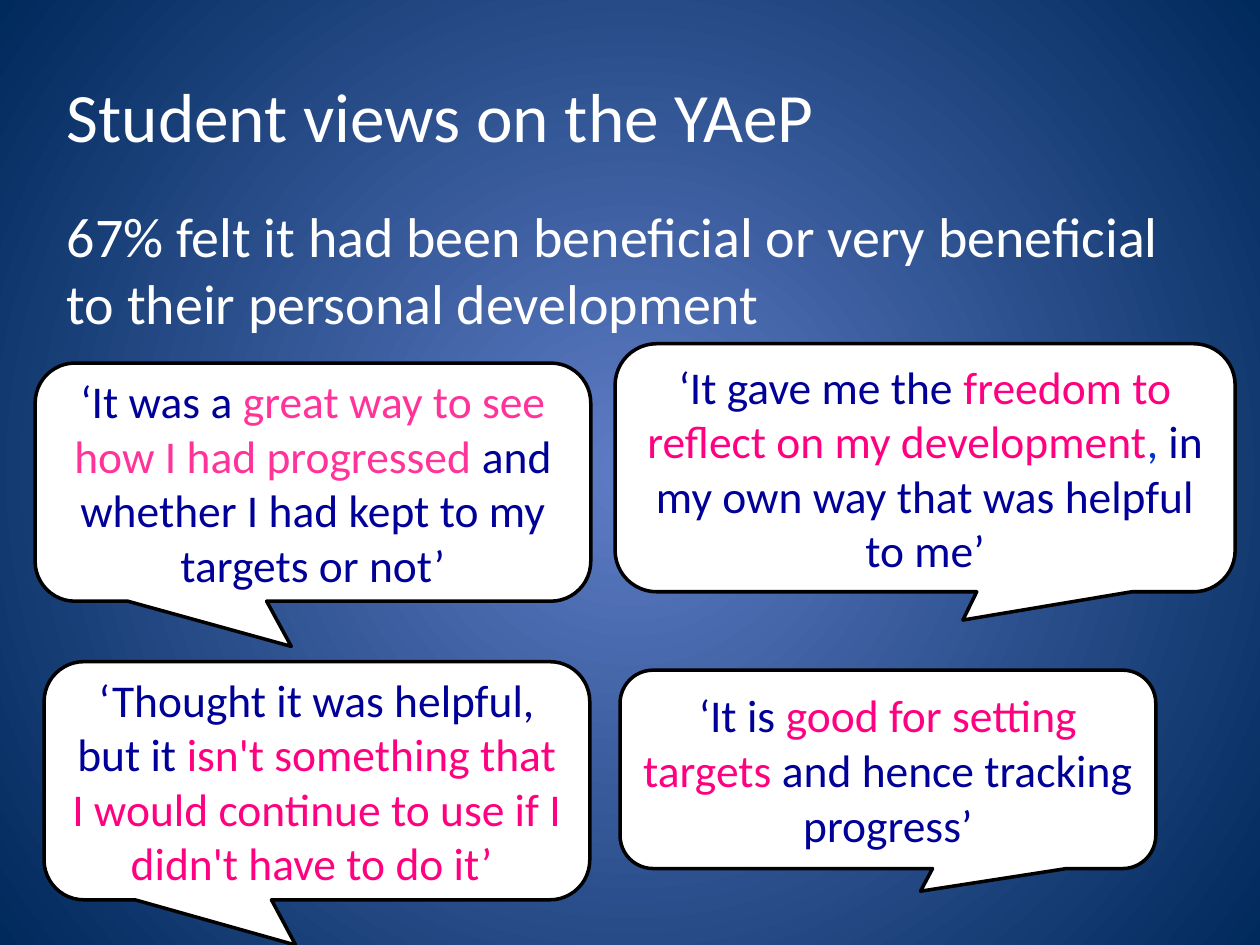
from lxml.etree import SubElement
from pptx import Presentation
from pptx.dml.color import RGBColor
from pptx.enum.shapes import MSO_SHAPE as Shape
from pptx.enum.text import MSO_ANCHOR as Anchor, MSO_AUTO_SIZE as AutoSize, PP_ALIGN as Align
from pptx.oxml.ns import qn
from pptx.util import Cm, Pt

NAVY, PINK, ROSE, BLUE = "000099", "FF0080", "FF3399", "0033CC"
WHITE, BLACK = "FFFFFF", "000000"
TAIL_LEFT, TAIL_RIGHT = (-0.039, 0.69, 0.167), (0.061, 0.614, 0.167)

QUOTES = [
    ((0.71, 7.32, 11.2, 4.8), TAIL_LEFT, [
        ("‘It was a ", NAVY),
        ("great way to see how I had progressed ", ROSE),
        ("and whether I had kept to my targets or not’", NAVY)]),
    ((12.4, 6.93, 12.5, 5), TAIL_RIGHT, [
        ("‘It gave me the ", NAVY),
        ("freedom to reflect on my development", PINK),
        (", ", BLUE),
        ("in my own way that was helpful to me’", NAVY)]),
    ((12.5, 13.51, 10.8, 4), TAIL_RIGHT, [
        ("‘It is ", NAVY),
        ("good for setting targets ", PINK),
        ("and hence tracking progress’", NAVY)]),
    ((0.89, 13.34, 11, 4.8), TAIL_LEFT, [
        ("‘Thought it was helpful, but it ", NAVY),
        ("isn't something that I would continue to use if I didn't have to do it’ ", PINK)]),
]


def color(hex_code):
    """Turn a hex string into a colour."""
    return RGBColor.from_string(hex_code)


def add_runs(paragraph, runs, size):
    """Add coloured pieces of text to a paragraph."""
    for text, hex_code in runs:
        run = paragraph.add_run()
        run.text = text
        run.font.name = "Calibri"
        run.font.size = Pt(size)
        run.font.color.rgb = color(hex_code)


def paint_background(slide, center, edge):
    """Fill the background with a gradient that spreads from the middle."""
    fill = slide.background.fill
    fill.gradient()
    for stop, hex_code in zip(fill.gradient_stops, (center, edge)):
        stop.color.rgb = color(hex_code)
    gradient = slide._element.find(".//" + qn("a:gradFill"))
    gradient.remove(gradient.find(qn("a:lin")))
    glow = SubElement(gradient, qn("a:path"), path="circle")
    SubElement(glow, qn("a:fillToRect"), {side: "50000" for side in "ltrb"})


def fill_placeholder(placeholder, box, text, size, anchor):
    """Move a placeholder and write unbulleted, left-aligned white text in it."""
    placeholder.left, placeholder.top, placeholder.width, placeholder.height = map(Cm, box)
    frame = placeholder.text_frame
    frame.auto_size = AutoSize.NONE
    frame.vertical_anchor = anchor
    paragraph = frame.paragraphs[0]
    paragraph.alignment = Align.LEFT
    properties = paragraph._p.get_or_add_pPr()
    properties.set("marL", "0")
    properties.set("indent", "0")
    SubElement(properties, qn("a:buNone"))
    add_runs(paragraph, [(text, WHITE)], size)


def add_quote(slide, box, tail, runs):
    """Add a speech bubble holding a student quote."""
    bubble = slide.shapes.add_shape(Shape.ROUNDED_RECTANGULAR_CALLOUT, *map(Cm, box))
    for index, value in enumerate(tail):
        bubble.adjustments[index] = value
    bubble.shadow.inherit = False
    bubble.fill.solid()
    bubble.fill.fore_color.rgb = color(WHITE)
    bubble.line.color.rgb = color(BLACK)
    bubble.line.width = Pt(2)
    frame = bubble.text_frame
    frame.word_wrap = True
    frame.vertical_anchor = Anchor.MIDDLE
    frame.paragraphs[0].alignment = Align.CENTER
    add_runs(frame.paragraphs[0], runs, 26)


def main():
    """Build the slide of student views."""
    deck = Presentation()
    deck.slide_width, deck.slide_height = Cm(25.4), Cm(19.05)
    slide = deck.slides.add_slide(deck.slide_layouts[1])
    paint_background(slide, "5E7CC5", "00295C")
    title, body = slide.placeholders
    fill_placeholder(title, (1.09, 1.32, 22.86, 1.98),
                     "Student views on the YAeP", 39.6, Anchor.MIDDLE)
    fill_placeholder(body, (1.09, 3.94, 22.86, 3.2),
                     "67% felt it had been beneficial or very beneficial to their personal development",
                     32, Anchor.TOP)
    for box, tail, runs in QUOTES:
        add_quote(slide, box, tail, runs)
    deck.save("out.pptx")


if __name__ == "__main__":
    main()
